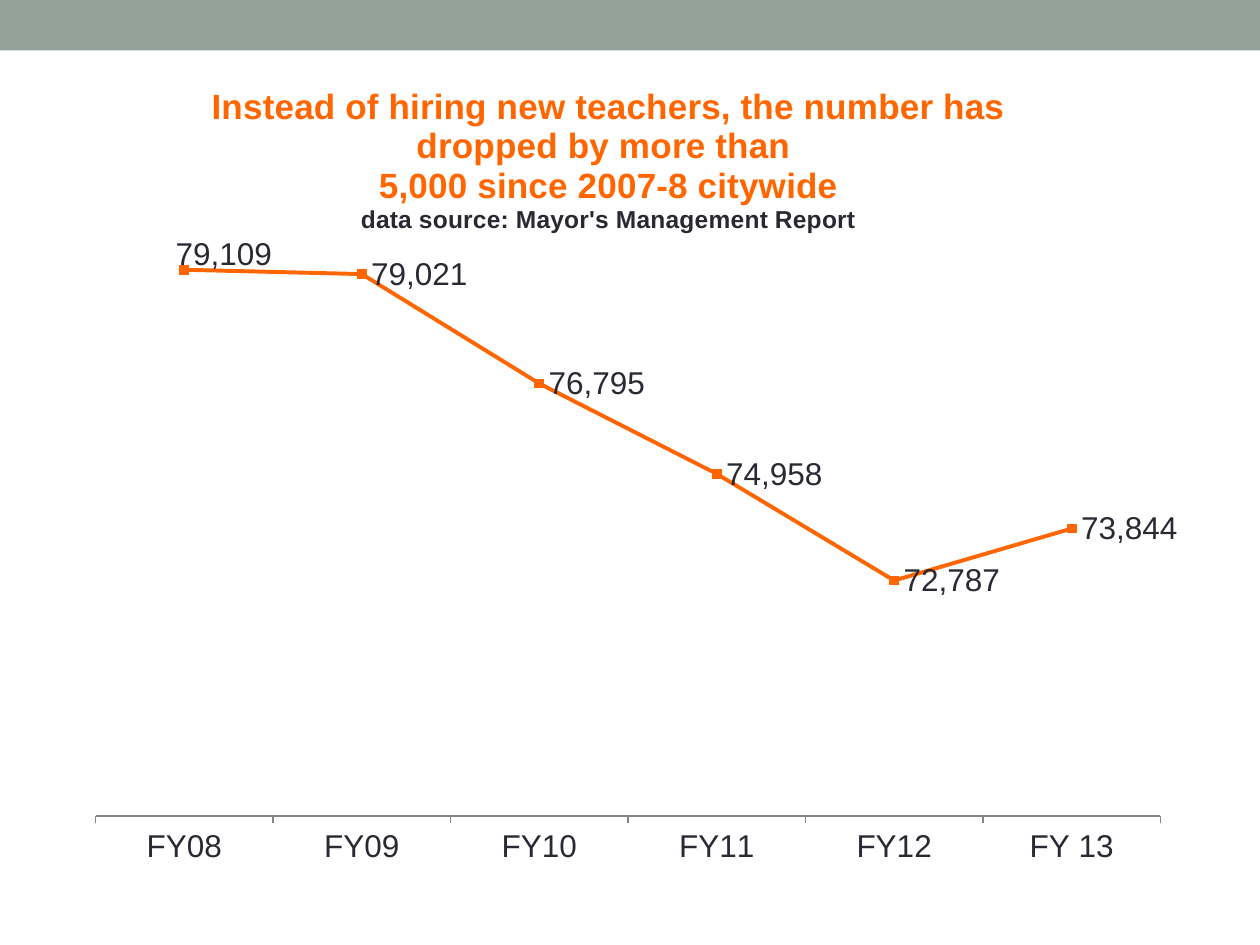
from lxml import etree
from pptx import Presentation
from pptx.chart.data import CategoryChartData
from pptx.dml.color import RGBColor
from pptx.enum.chart import XL_CHART_TYPE, XL_LABEL_POSITION, XL_TICK_MARK
from pptx.enum.shapes import MSO_SHAPE
from pptx.enum.text import PP_ALIGN
from pptx.oxml.ns import qn
from pptx.util import Inches, Pt

LINE_CHART = XL_CHART_TYPE.LINE
RIGHT = XL_LABEL_POSITION.RIGHT
TICK_OUT, TICK_NONE = XL_TICK_MARK.OUTSIDE, XL_TICK_MARK.NONE
RECTANGLE = MSO_SHAPE.RECTANGLE
CENTER = PP_ALIGN.CENTER

WIDTH, HEIGHT = Inches(10), Inches(7.5)
FONT = "Arial"
ORANGE, DARK, SAGE, GREY = "FF6600", "292934", "93A299", "868686"
COUNT_FORMAT = "#,##0"

TITLE_LINES = [
    ("Instead of hiring new teachers, the number has dropped by more than ", 20, ORANGE),
    ("5,000 since 2007-8 citywide", 20, ORANGE),
    ("data source: Mayor's Management Report", 14, DARK),
]
TEACHERS = {
    "FY08": 79109, "FY09": 79021, "FY10": 76795,
    "FY11": 74958, "FY12": 72787, "FY 13": 73844,
}


def color(hex_string):
    return RGBColor.from_string(hex_string)


def style_font(font, size, hex_string, bold=False):
    font.name, font.size, font.bold = FONT, Pt(size), bold
    font.color.rgb = color(hex_string)


def set_layout(parent, after, **settings):
    """Give a chart element a manual layout, placed after the named child."""
    old = parent.find(qn("c:layout"))
    if old is not None:
        parent.remove(old)
    layout = etree.Element(qn("c:layout"))
    manual = etree.SubElement(layout, qn("c:manualLayout"))
    for name, value in settings.items():
        etree.SubElement(manual, qn(f"c:{name}")).set("val", str(value))
    if after is None:
        parent.insert(0, layout)
    else:
        parent.find(qn(after)).addnext(layout)


class SlideBuilder:
    """Places elements on one slide; boxes are shares of the slide's size."""

    def __init__(self, deck):
        self.slide = deck.slides.add_slide(deck.slide_layouts[6])

    def frame(self, left, top, width, height):
        return (round(left * WIDTH), round(top * HEIGHT),
                round(width * WIDTH), round(height * HEIGHT))

    def band(self, box, fill):
        band = self.slide.shapes.add_shape(RECTANGLE, *self.frame(*box))
        band.shadow.inherit = False
        band.fill.solid()
        band.fill.fore_color.rgb = color(fill)
        band.line.fill.background()

    def line_chart(self, box, values, low, high):
        data = CategoryChartData(number_format=COUNT_FORMAT)
        data.categories = list(values)
        data.add_series("Series 1", list(values.values()))
        chart = self.slide.shapes.add_chart(LINE_CHART, *self.frame(*box), data).chart
        style_font(chart.font, 10, DARK)
        chart.has_legend = False
        self.axes(chart, low, high)
        self.series(chart.plots[0])
        plot_area = chart._chartSpace.find(".//" + qn("c:plotArea"))
        set_layout(plot_area, None, layoutTarget="inner", xMode="edge", yMode="edge",
                   x=0.031, y=0.182, w=0.939, h=0.702)
        return chart

    def axes(self, chart, low, high):
        years = chart.category_axis
        years.major_tick_mark, years.minor_tick_mark = TICK_OUT, TICK_NONE
        years.has_major_gridlines = False
        years.format.line.color.rgb = color(GREY)
        style_font(years.tick_labels.font, 18, DARK)
        counts = chart.value_axis
        counts.minimum_scale, counts.maximum_scale = low, high
        counts.has_major_gridlines = False
        counts.visible = False

    def series(self, plot):
        plot.vary_by_categories = False
        series = plot.series[0]
        series.smooth = False
        series.marker.style = None
        series.format.line.color.rgb = color(ORANGE)
        series.format.line.width = Pt(2.25)
        labels = series.data_labels
        labels.show_value = True
        labels.position = RIGHT
        labels.number_format = COUNT_FORMAT
        labels.number_format_is_linked = False
        style_font(labels.font, 18, DARK)
        first = series.points[0].data_label
        first.position = RIGHT
        style_font(first.font, 18, DARK)
        first_label = series._element.find(".//" + qn("c:dLbl"))
        set_layout(first_label, "c:idx", x=-0.016, y=-0.018)

    def chart_title(self, chart, lines):
        title = chart.chart_title
        title.include_in_layout = False
        text = title.text_frame
        for index, (wording, size, hex_string) in enumerate(lines):
            para = text.add_paragraph() if index else text.paragraphs[0]
            para.text = wording
            para.alignment = CENTER
            style_font(para.font, size, hex_string, bold=True)
        set_layout(title._element, "c:tx", xMode="edge", yMode="edge", x=0.13, y=0.01)


def main():
    deck = Presentation()
    deck.slide_width, deck.slide_height = WIDTH, HEIGHT
    page = SlideBuilder(deck)
    page.band((0, 0, 1, 0.4 / 7.5), SAGE)
    chart = page.line_chart((0.048, 0.58 / 7.5, 0.9, 6.67 / 7.5), TEACHERS, 68000, 80000)
    page.chart_title(chart, TITLE_LINES)
    deck.save("out.pptx")


if __name__ == "__main__":
    main()
